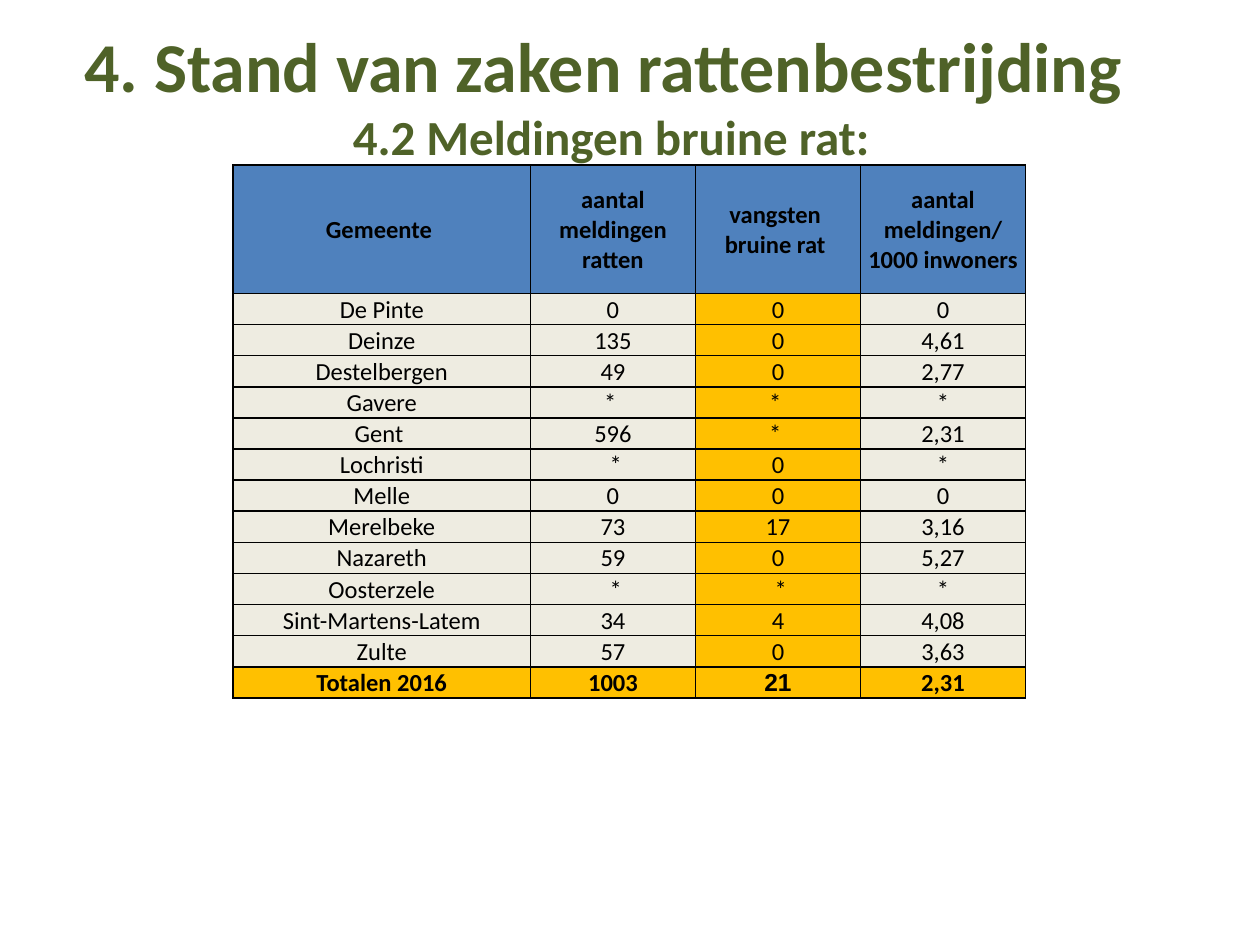
from lxml import etree
from pptx import Presentation
from pptx.dml.color import RGBColor
from pptx.enum.text import MSO_ANCHOR, MSO_AUTO_SIZE, PP_ALIGN
from pptx.oxml.ns import qn
from pptx.util import Inches, Pt

CENTER = PP_ALIGN.CENTER
TOP, MIDDLE = MSO_ANCHOR.TOP, MSO_ANCHOR.MIDDLE
NO_AUTOFIT = MSO_AUTO_SIZE.NONE

GREEN = RGBColor(0x4F, 0x62, 0x28)
BLUE = RGBColor(0x4F, 0x81, 0xBD)
CREAM = RGBColor(0xEE, 0xEC, 0xE1)
ORANGE = RGBColor(0xFF, 0xC0, 0x00)
BLACK = RGBColor(0, 0, 0)

TITLE_LINES = [("4. Stand van zaken rattenbestrijding ", 40), ("4.2 Meldingen bruine rat:", 28)]
ROWS = [
    ("Gemeente ", "aantal meldingen ratten", "vangsten \nbruine rat ",
     "aantal meldingen/ 1000 inwoners"),
    ("De Pinte", "0", "0", "0"),
    ("Deinze", "135", "0", "4,61"),
    ("Destelbergen", "49", "0", "2,77"),
    ("Gavere", "* ", "* ", "*"),
    ("Gent ", "596", "* ", "2,31"),
    ("Lochristi", " *", "0", "*"),
    ("Melle", "0", "0", "0"),
    ("Merelbeke", "73", "17", "3,16"),
    ("Nazareth", "59", "0", "5,27"),
    ("Oosterzele", " *", " *", "*"),
    ("Sint-Martens-Latem", "34", "4", "4,08"),
    ("Zulte", "57", "0", "3,63"),
    ("Totalen 2016", "1003", "21", "2,31"),
]
CATCH_COLUMN = 2
LAST_ROW = len(ROWS) - 1
COLUMN_WIDTHS = [2.36, 1.31, 1.31, 1.31]
TABLE_HEIGHT, HEADER_HEIGHT = 4.17, 1.02
ROW_HEIGHT = (TABLE_HEIGHT - HEADER_HEIGHT) / LAST_ROW
CELL_FORMAT = {
    "margin_left": Inches(0.01), "margin_top": Inches(0.01),
    "margin_right": Inches(0.01), "margin_bottom": 0,
    "vertical_anchor": MIDDLE,
}


def format_paragraph(paragraph, size, color, bold, name="Calibri"):
    paragraph.alignment = CENTER
    paragraph.font.color.rgb = color
    for attribute, value in {"size": Pt(size), "bold": bold, "name": name}.items():
        setattr(paragraph.font, attribute, value)


def add_borders(cell):
    """Draw 1 pt black lines on all sides; they must precede the cell's fill."""
    properties = cell._tc.get_or_add_tcPr()
    for position, side in enumerate(("a:lnL", "a:lnR", "a:lnT", "a:lnB")):
        line = etree.Element(qn(side), w=str(Pt(1)))
        fill = etree.SubElement(line, qn("a:solidFill"))
        etree.SubElement(fill, qn("a:srgbClr"), val=str(BLACK))
        properties.insert(position, line)


presentation = Presentation()
presentation.slide_width = Inches(10)
presentation.slide_height = Inches(7.5)
slide = presentation.slides.add_slide(presentation.slide_layouts[5])

title = slide.shapes.title
title.left, title.top = Inches(0.35), Inches(0.13)
title.width, title.height = Inches(9), Inches(5.42)
title_frame = title.text_frame
title_frame.auto_size = NO_AUTOFIT
title_frame.vertical_anchor = TOP
title_frame.text = "\n".join(text for text, size in TITLE_LINES)
for paragraph, (text, size) in zip(title_frame.paragraphs, TITLE_LINES):
    format_paragraph(paragraph, size, GREEN, True)

table = slide.shapes.add_table(
    len(ROWS), len(COLUMN_WIDTHS), Inches(1.85), Inches(1.31),
    Inches(sum(COLUMN_WIDTHS)), Inches(TABLE_HEIGHT)).table
for column, width in zip(table.columns, COLUMN_WIDTHS):
    column.width = Inches(width)

for row_index, row in enumerate(ROWS):
    is_header, is_total = row_index == 0, row_index == LAST_ROW
    table.rows[row_index].height = Inches(HEADER_HEIGHT if is_header else ROW_HEIGHT)
    for column_index, text in enumerate(row):
        is_catch = column_index == CATCH_COLUMN
        cell = table.cell(row_index, column_index)
        for attribute, value in CELL_FORMAT.items():
            setattr(cell, attribute, value)
        cell.fill.solid()
        cell.fill.fore_color.rgb = BLUE if is_header else ORANGE if is_total or is_catch else CREAM
        add_borders(cell)
        cell.text = text
        font_name = "Arial" if is_total and is_catch else "Calibri"
        for paragraph in cell.text_frame.paragraphs:
            format_paragraph(paragraph, 14, BLACK, is_header or is_total, font_name)

presentation.save("out.pptx")
